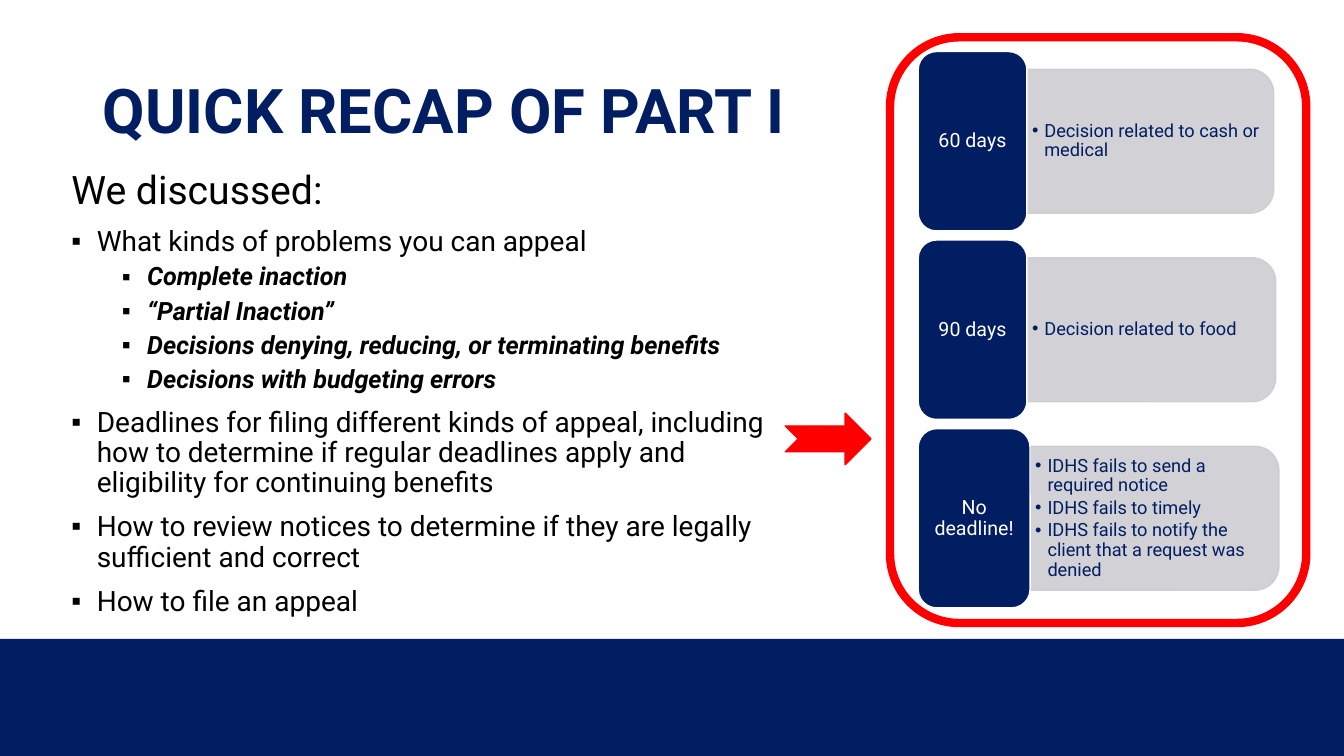
import pptx
import pptx.util
from lxml import etree
from pptx.dml.color import RGBColor
from pptx.enum.shapes import MSO_SHAPE
from pptx.enum.text import MSO_ANCHOR, PP_ALIGN
from pptx.oxml.ns import qn
from pptx.util import Cm, Pt

# Content
TITLE = "QUICK RECAP OF PART I"
# (style, text)
RECAP = [
    ("lead", "We discussed:"),
    ("point", "What kinds of problems you can appeal"),
    ("detail", "Complete inaction"),
    ("detail", "“Partial Inaction”"),
    ("detail", "Decisions denying, reducing, or terminating benefits"),
    ("detail", "Decisions with budgeting errors"),
    ("point", "Deadlines for filing different kinds of appeal, including how to "
              "determine if regular deadlines apply and eligibility for continuing benefits"),
    ("point", "How to review notices to determine if they are legally sufficient and correct"),
    ("point", "How to file an appeal"),
]
# (deadline, label width in cm, panel width in cm, reasons)
DEADLINES = [
    ("60 days", 2.74, 6.22, ["Decision related to cash or medical"]),
    ("90 days", 2.74, 6.27, ["Decision related to food"]),
    ("No deadline!", 2.82, 6.27, ["IDHS fails to send a required notice",
                                  "IDHS fails to timely",
                                  "IDHS fails to notify the client that a request was denied"]),
]

# Look
FONT = "Roboto"
NAVY = RGBColor(0x00, 0x1E, 0x61)
GRAY = RGBColor(0xCC, 0xCD, 0xD2)
RED = RGBColor(0xFF, 0x00, 0x00)
WHITE = RGBColor(0xFF, 0xFF, 0xFF)
BLACK = RGBColor(0x00, 0x00, 0x00)
# style: (size, space before, text indent in cm, bold italic)
RECAP_STYLES = {
    "lead": (28, 0, 0, False),
    "point": (20, 10, 0.64, False),
    "detail": (18, 5, 1.91, True),
}
RECAP_HANGING = 0.64
REASON_HANGING = 0.31

# Deadline rows, in cm
LABEL_LEFT, LABEL_TOP, LABEL_HEIGHT, ROW_STEP = 23.14, 1.3, 4.52, 4.75
PANEL_HEIGHT, REASONS_HEIGHT = 3.63, 3.28


def add_shape(slide, preset, left, top, width, height, fill=None, line=None, line_width=1):
    shape = slide.shapes.add_shape(preset, Cm(left), Cm(top), Cm(width), Cm(height))
    shape.shadow.inherit = False
    if fill is None:
        shape.fill.background()
    else:
        shape.fill.solid()
        shape.fill.fore_color.rgb = fill
    if line is None:
        shape.line.fill.background()
    else:
        shape.line.color.rgb = line
        shape.line.width = Pt(line_width)
    return shape


def set_frame(shape, anchor, side=0.25, edge=0.13):
    frame = shape.text_frame
    frame.word_wrap = True
    frame.vertical_anchor = anchor
    frame.margin_left = frame.margin_right = Cm(side)
    frame.margin_top = frame.margin_bottom = Cm(edge)
    return frame


def add_text_box(slide, left, top, width, height, anchor, **margins):
    box = slide.shapes.add_textbox(Cm(left), Cm(top), Cm(width), Cm(height))
    return set_frame(box, anchor, **margins)


def add_paragraph(frame, index, text, size, color, bold=False, italic=False,
                  bullet=None, indent=0, hanging=0, before=0, after=0,
                  align=PP_ALIGN.LEFT):
    paragraph = frame.add_paragraph() if index else frame.paragraphs[0]
    paragraph.text = text
    if bullet:
        properties = paragraph._p.get_or_add_pPr()
        properties.set("marL", str(Cm(indent)))
        properties.set("indent", str(-Cm(hanging)))
        etree.SubElement(properties, qn("a:buFont")).set("typeface", "Arial")
        etree.SubElement(properties, qn("a:buChar")).set("char", bullet)
    paragraph.alignment = align
    paragraph.line_spacing = 0.9
    paragraph.space_before = Pt(before)
    paragraph.space_after = Pt(after)
    font = paragraph.font
    font.name, font.size, font.bold, font.italic = FONT, Pt(size), bold, italic
    font.color.rgb = color


def add_deadline(slide, row, deadline, label_width, panel_width, reasons):
    top = LABEL_TOP + row * ROW_STEP
    middle = top + LABEL_HEIGHT / 2
    panel_left = LABEL_LEFT + label_width

    # Panel rounded on its right side: a quarter turn about its centre
    panel = add_shape(slide, MSO_SHAPE.ROUND_2_SAME_RECTANGLE,
                      panel_left + (panel_width - PANEL_HEIGHT) / 2, middle - panel_width / 2,
                      PANEL_HEIGHT, panel_width, GRAY, GRAY)
    panel.rotation = 90
    for color in panel._element.spPr.iter(qn("a:srgbClr")):
        etree.SubElement(color, qn("a:alpha")).set("val", "90000")

    frame = add_text_box(slide, panel_left, middle - REASONS_HEIGHT / 2, panel_width - 0.17,
                         REASONS_HEIGHT, MSO_ANCHOR.MIDDLE, side=0.13, edge=0.08)
    for index, reason in enumerate(reasons):
        add_paragraph(frame, index, reason, 13, NAVY, bullet="•", indent=REASON_HANGING,
                      hanging=REASON_HANGING, after=2)

    label = add_shape(slide, MSO_SHAPE.ROUNDED_RECTANGLE, LABEL_LEFT, top,
                      label_width, LABEL_HEIGHT, NAVY, WHITE)
    frame = set_frame(label, MSO_ANCHOR.MIDDLE, side=0.15, edge=0.08)
    add_paragraph(frame, 0, deadline, 14, WHITE, align=PP_ALIGN.CENTER)


def main():
    presentation = pptx.Presentation()
    presentation.slide_width, presentation.slide_height = Cm(33.87), Cm(19.05)
    slide = presentation.slides.add_slide(presentation.slide_layouts[6])

    # Footer band
    add_shape(slide, MSO_SHAPE.RECTANGLE, 0, 16.1, 33.87, 2.95, NAVY)

    # Title and recap list
    frame = add_text_box(slide, 2.34, 1.02, 20, 3.68, MSO_ANCHOR.MIDDLE)
    add_paragraph(frame, 0, TITLE, 44, NAVY, bold=True)

    frame = add_text_box(slide, 1.55, 4.17, 18.24, 10.67, MSO_ANCHOR.TOP)
    for index, (style, text) in enumerate(RECAP):
        size, before, indent, strong = RECAP_STYLES[style]
        add_paragraph(frame, index, text, size, BLACK, bold=strong, italic=strong,
                      bullet="▪" if indent else None, indent=indent,
                      hanging=RECAP_HANGING, before=before)

    # Deadline rows
    for row, deadline in enumerate(DEADLINES):
        add_deadline(slide, row, *deadline)

    # Red arrow and frame around the deadlines
    add_shape(slide, MSO_SHAPE.NOTCHED_RIGHT_ARROW, 19.79, 10.41, 2.16, 1.3, RED, RED)
    add_shape(slide, MSO_SHAPE.ROUNDED_RECTANGLE, 22.43, 0.94, 10.49, 14.76,
              line=RED, line_width=6)

    presentation.save("out.pptx")


if __name__ == "__main__":
    main()
